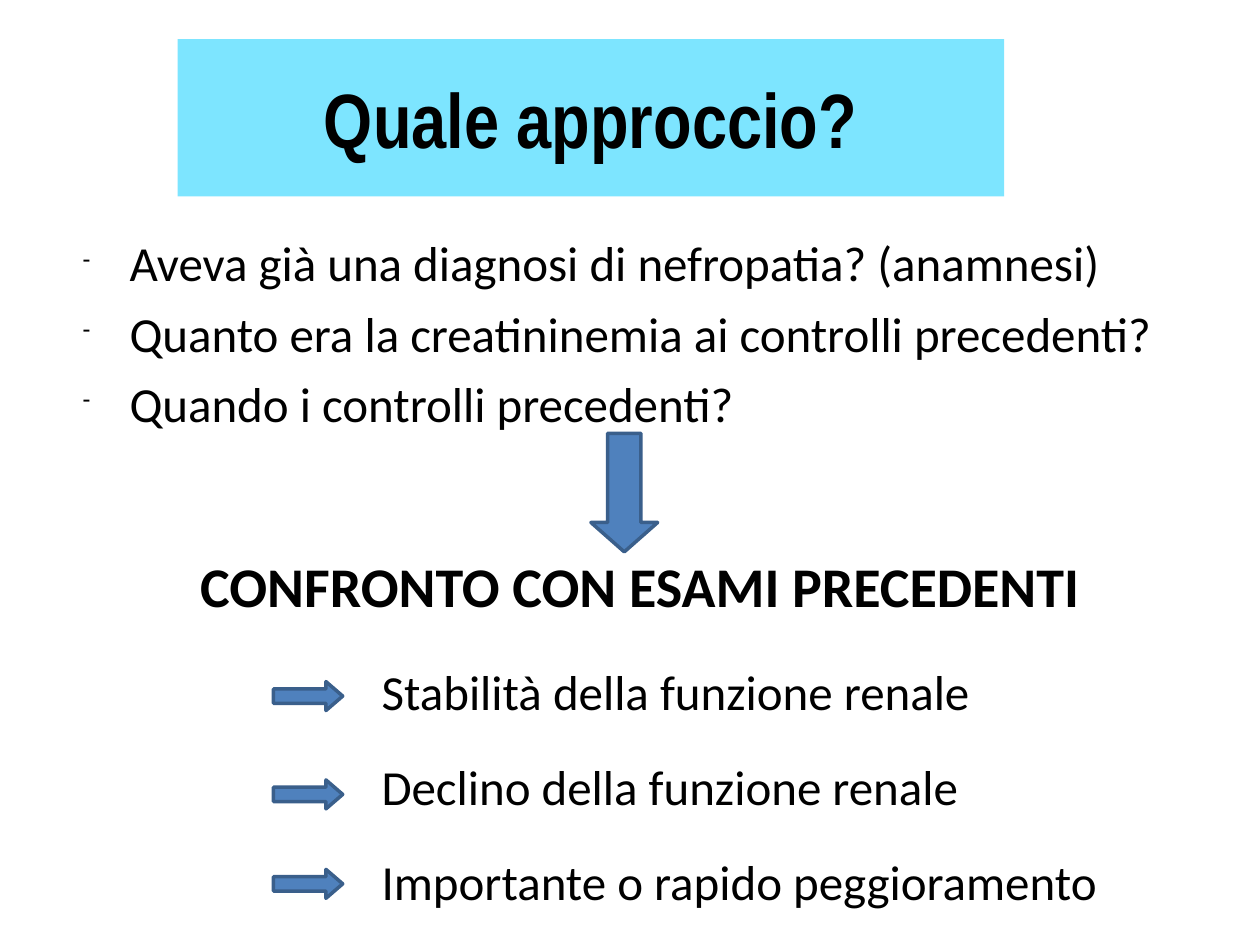
from lxml.etree import SubElement
from pptx import Presentation
from pptx.dml.color import RGBColor
from pptx.enum.shapes import MSO_SHAPE
from pptx.enum.text import MSO_ANCHOR, PP_ALIGN
from pptx.oxml.ns import qn
from pptx.util import Inches, Pt

COLORS = {"ink": "000000", "band": "00CCFF", "arrow": "4F81BD", "edge": "3A5F8B"}
COLS, ROWS = 100, 75
WIDE, HIGH = Inches(10), Inches(7.5)


def tint(name):
    """Return the named colour."""
    return RGBColor.from_string(COLORS[name])


def place(box):
    """Turn grid columns and rows into slide lengths."""
    x, y, w, h = box
    return [int(n) for n in (x * WIDE / COLS, y * HIGH / ROWS, w * WIDE / COLS, h * HIGH / ROWS)]


def write(para, text, size, font="Calibri", bold=False):
    """Add one styled run to a paragraph."""
    run = para.add_run()
    run.text = text
    run.font.size, run.font.name, run.font.bold = Pt(size), font, bold
    run.font.color.rgb = tint("ink")


def lines(slide, box, texts, size, before=0, after=0, bold=False):
    """Place a text box with one paragraph per text and return the paragraphs."""
    frame = slide.shapes.add_textbox(*place(box)).text_frame
    frame.word_wrap = True
    for i, text in enumerate(texts):
        para = frame.add_paragraph() if i else frame.paragraphs[0]
        para.space_before = Pt(before if i else 0)
        para.space_after = Pt(after)
        write(para, text, size, bold=bold)
    return frame.paragraphs


def title(slide, box, text):
    """Place the title on its translucent band."""
    band = slide.shapes.add_shape(MSO_SHAPE.RECTANGLE, *place(box))
    band.shadow.inherit = False
    band.fill.solid()
    band.fill.fore_color.rgb = tint("band")
    shade = band.fill._xPr.find(qn("a:solidFill"))[0]
    SubElement(shade, qn("a:alpha"), val="51000")
    band.line.fill.background()
    band.text_frame.vertical_anchor = MSO_ANCHOR.MIDDLE
    para = band.text_frame.paragraphs[0]
    para.alignment = PP_ALIGN.CENTER
    write(para, text, 44, "Arial Narrow", True)


def arrow(slide, box, kind, head):
    """Place one block arrow with the given head length."""
    shape = slide.shapes.add_shape(kind, *place(box))
    shape.shadow.inherit = False
    shape.adjustments[0], shape.adjustments[1] = 0.5, head
    shape.fill.solid()
    shape.fill.fore_color.rgb = tint("arrow")
    shape.line.color.rgb = tint("edge")
    shape.line.width = Pt(2)


def asks(slide, box, texts):
    """Place the dashed list of questions."""
    for para in lines(slide, box, texts, 28, before=6.4):
        props = para._p.get_or_add_pPr()
        props.set("marL", str(Inches(0.38)))
        props.set("indent", str(Inches(-0.37)))
        SubElement(props, qn("a:buSzPct"), val="45000")
        SubElement(props, qn("a:buChar"), char="-")


def result(slide, box, head, texts, tops):
    """Place the heading and the outcomes, each with its arrow."""
    x, y, w, h = box
    lines(slide, (x, y, w, 6.5), [head], 32, bold=True)[0].alignment = PP_ALIGN.CENTER
    lines(slide, (x + 23.8, y + 8.7, w - 23.8, h - 8.7), texts, 28, 6.4, 14.2)
    for top in tops:
        arrow(slide, (x + 16.2, y + top, 5.5, 2.3), MSO_SHAPE.RIGHT_ARROW, 0.58)


def main():
    """Build and save the slide."""
    deck = Presentation()
    deck.slide_width, deck.slide_height = WIDE, HIGH
    slide = deck.slides.add_slide(deck.slide_layouts[6])
    asks(slide, (5.5, 18, 90.6, 17), [
        "Aveva già una diagnosi di nefropatia? (anamnesi)",
        "Quanto era la creatininemia ai controlli precedenti?",
        "Quando i controlli precedenti?",
    ])
    title(slide, (14.1, 3.1, 65.6, 12.5), "Quale approccio?")
    arrow(slide, (46.9, 34.4, 5.3, 9.4), MSO_SHAPE.DOWN_ARROW, 0.44)
    result(slide, (5.5, 43.3, 90.6, 30), "CONFRONTO CON ESAMI PRECEDENTI", [
        "Stabilità della funzione renale",
        "Declino della funzione renale",
        "Importante o rapido peggioramento",
    ], (10.8, 18.6, 25.7))
    deck.save("out.pptx")


if __name__ == "__main__":
    main()
